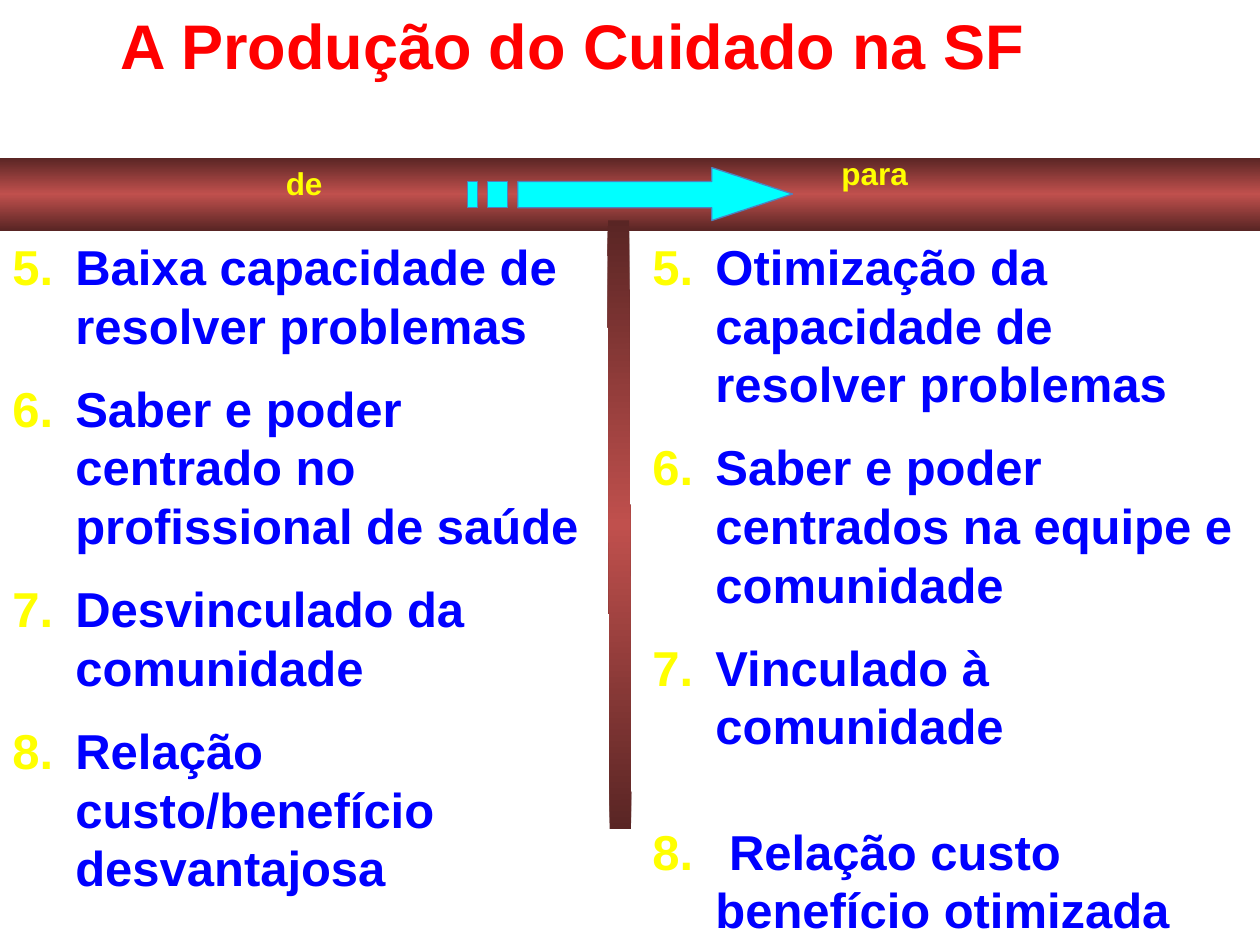
from copy import deepcopy

from lxml.etree import SubElement
from pptx import Presentation
from pptx.dml.color import RGBColor
from pptx.enum.shapes import MSO_SHAPE
from pptx.enum.text import MSO_AUTO_SIZE
from pptx.oxml.ns import qn
from pptx.util import Inches, Pt

COLORS = {name: RGBColor.from_string(value) for name, value in {
    "title": "FF0000", "label": "FFFF00", "item": "0000FF",
    "bar_edge": "592524", "bar_middle": "C0504D",
    "arrow": "00FFFF", "arrow_line": "4F81BD",
}.items()}

deck = Presentation()
deck.slide_width, deck.slide_height = Inches(10), Inches(7.5)
page = deck.slides.add_slide(deck.slide_layouts[6])


def add_bar(left, top, width, height, angle, rotation=0):
    """Add a rectangle shaded from dark edges to a lighter middle."""
    bar = page.shapes.add_shape(
        MSO_SHAPE.RECTANGLE, Inches(left), Inches(top), Inches(width), Inches(height))
    bar.shadow.inherit = False
    bar.rotation = rotation
    bar.line.fill.background()
    bar.fill.gradient()
    bar.fill.gradient_angle = angle
    stop_list = bar.fill._fill._gradFill.find(qn("a:gsLst"))
    stop_list.insert(1, deepcopy(stop_list[0]))
    shades = ("bar_edge", "bar_middle", "bar_edge")
    for index, (stop, shade) in enumerate(zip(bar.fill.gradient_stops, shades)):
        stop.position = index / 2
        stop.color.rgb = COLORS[shade]


def add_text(left, top, width, height, texts, size, color, first_number=None, gaps=()):
    """Add a bold text box; its paragraphs are numbered if first_number is given."""
    box = page.shapes.add_textbox(Inches(left), Inches(top), Inches(width), Inches(height))
    frame = box.text_frame
    frame.auto_size = MSO_AUTO_SIZE.SHAPE_TO_FIT_TEXT
    frame.word_wrap = width > 2
    for index, text in enumerate(texts):
        para = frame.paragraphs[0] if index == 0 else frame.add_paragraph()
        if first_number:
            para.line_spacing = Pt(33.5)
            if index:
                para.space_before = Pt(gaps[index - 1])
            props = para._p.get_or_add_pPr()
            props.set("marL", str(Inches(0.5)))
            props.set("indent", str(Inches(-0.5)))
            bullet_color = SubElement(props, qn("a:buClr"))
            SubElement(bullet_color, qn("a:srgbClr"), val=str(COLORS["label"]))
            SubElement(props, qn("a:buFont"), typeface="+mj-lt")
            SubElement(props, qn("a:buAutoNum"), type="arabicPeriod", startAt=str(first_number))
        span = para.add_run()
        span.text = text
        span.font.name = "Arial"
        span.font.size = Pt(size)
        span.font.bold = True
        span.font.color.rgb = COLORS[color]


# Header band and the divider between the two columns
add_bar(0, 1.25, 10, 0.58, angle=90)
add_bar(2.5, 4.08, 4.83, 0.17, angle=0, rotation=89.8)

add_text(2.17, 1.25, 0.66, 0.57, ["de"], 18, "label")
add_text(6.58, 1.17, 1.02, 0.57, ["para"], 18, "label")

# Striped arrow, in hundredths of an inch
shaft_top, shaft_bottom = 144, 165
arrow_head = [(565, 133), (565, shaft_top), (411, shaft_top), (411, shaft_bottom),
              (565, shaft_bottom), (565, 175), (629, 154)]
stripes = [[(left, shaft_top), (left, shaft_bottom), (right, shaft_bottom), (right, shaft_top)]
           for left, right in ((387, 403), (371, 379))]
builder = page.shapes.build_freeform(*arrow_head[0], scale=Inches(0.01))
builder.add_line_segments(arrow_head[1:], close=True)
for stripe in stripes:
    builder.move_to(*stripe[0])
    builder.add_line_segments(stripe[1:], close=True)
arrow = builder.convert_to_shape()
arrow.shadow.inherit = False
arrow.fill.solid()
arrow.fill.fore_color.rgb = COLORS["arrow"]
arrow.line.color.rgb = COLORS["arrow_line"]
arrow.line.width = Pt(0.75)

add_text(0.86, 0, 8.44, 0.71, ["A Produção do Cuidado na SF"], 36, "title")

columns = [
    (0, 5.52, (14, 14, 14), [
        "Baixa capacidade de resolver problemas",
        "Saber e poder centrado no profissional de saúde",
        "Desvinculado da comunidade",
        "Relação custo/benefício desvantajosa",
    ]),
    (5.08, 5.87, (14, 14, 38), [
        "Otimização da capacidade de resolver problemas",
        "Saber e poder centrados na equipe e comunidade",
        "Vinculado à comunidade",
        " Relação custo benefício otimizada",
    ]),
]
for left, height, gaps, items in columns:
    add_text(left, 1.83, 4.92, height, items, 28, "item", first_number=5, gaps=gaps)

deck.save("out.pptx")
